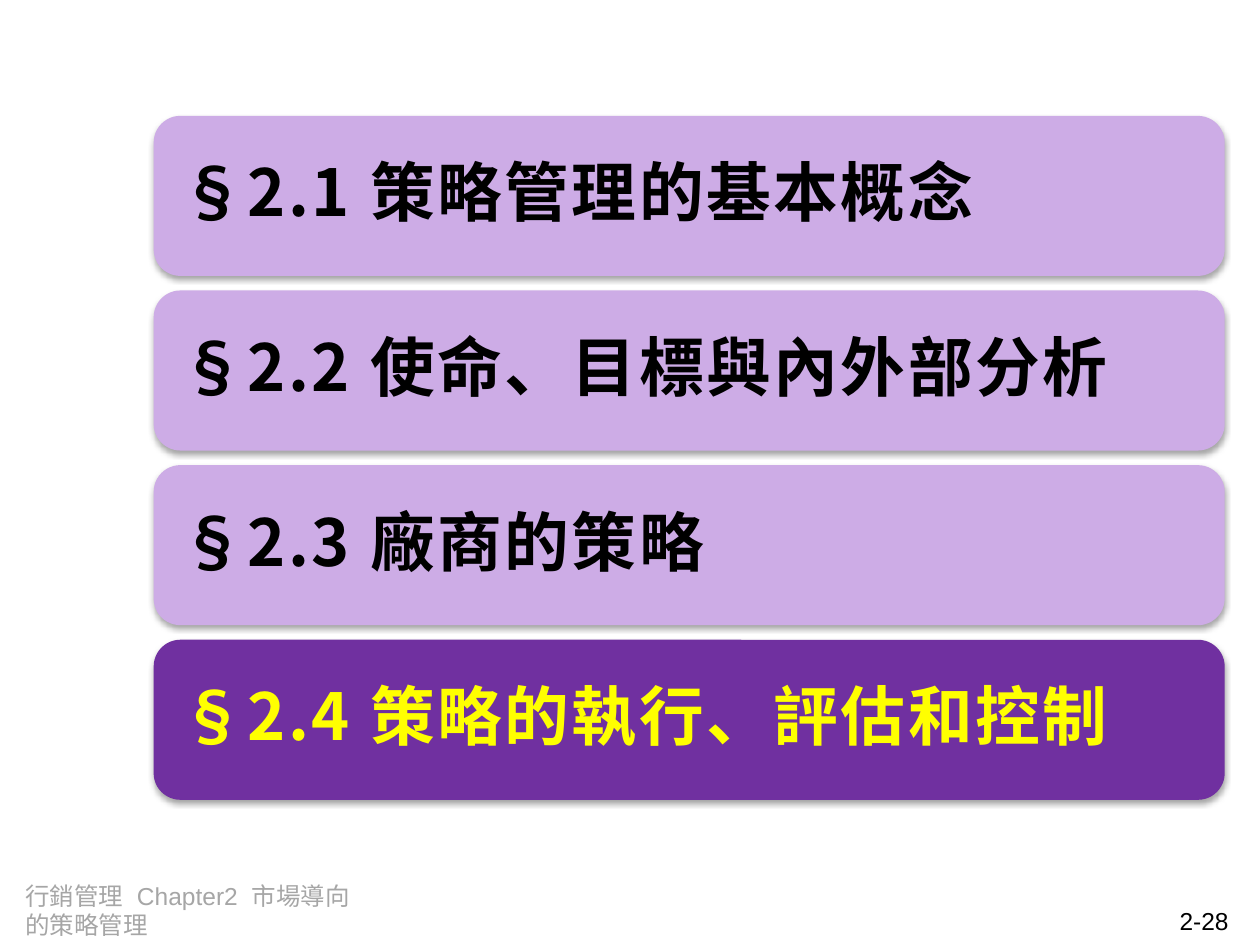
from dataclasses import dataclass

from lxml import etree
from pptx import Presentation
from pptx.dml.color import RGBColor
from pptx.enum.shapes import MSO_SHAPE
from pptx.enum.text import MSO_ANCHOR, PP_ALIGN
from pptx.oxml.ns import qn
from pptx.util import Inches, Pt

ROUNDED = MSO_SHAPE.ROUNDED_RECTANGLE
MIDDLE = MSO_ANCHOR.MIDDLE
LEFT, RIGHT = PP_ALIGN.LEFT, PP_ALIGN.RIGHT
COLUMNS, ROWS = 100, 75

SECTIONS = [
    "§2.1 策略管理的基本概念",
    "§2.2 使命、目標與內外部分析",
    "§2.3 廠商的策略",
    "§2.4 策略的執行、評估和控制",
]
CURRENT_SECTION = 3


@dataclass(frozen=True)
class Theme:
    bar: str = "CDACE6"
    bar_current: str = "7030A0"
    text: str = "000000"
    text_current: str = "FFFF00"
    footer: str = "A6A6A6"
    heading_font: str = "Noto Sans CJK SC"
    footer_font: str = "Arial"
    heading_size: float = 37
    footer_size: float = 14


def write_text(frame, text, *, font, size, color, bold=False, align=LEFT,
               spacing=0, line_spacing=None, space_after=None):
    frame.word_wrap = True
    paragraph = frame.paragraphs[0]
    paragraph.alignment = align
    paragraph.line_spacing = line_spacing
    paragraph.space_after = space_after
    run = paragraph.add_run()
    run.text = text
    run.font.name = font
    run.font.size = Pt(size)
    run.font.bold = bold
    run.font.color.rgb = RGBColor.from_string(color)
    properties = run.font._element
    if spacing:
        properties.set("spc", str(int(spacing * 100)))
    etree.SubElement(properties, qn("a:ea"), typeface=font)


def add_soft_shadow(shape):
    """Replace the inherited shadow by a faint one straight below."""
    shape.shadow.inherit = False
    effects = shape._element.spPr.find(qn("a:effectLst"))
    shadow = etree.SubElement(
        effects, qn("a:outerShdw"), blurRad=str(Pt(3.1)), dist=str(Pt(1.8)),
        dir="5400000", rotWithShape="0")
    color = etree.SubElement(shadow, qn("a:srgbClr"), val="000000")
    etree.SubElement(color, qn("a:alpha"), val="35000")


class SlideBuilder:
    def __init__(self, presentation, theme):
        self.theme = theme
        self.column = presentation.slide_width / COLUMNS
        self.row = presentation.slide_height / ROWS
        self.slide = presentation.slides.add_slide(presentation.slide_layouts[6])

    def place(self, left, top, width, height):
        """Turn grid columns and rows into slide lengths."""
        return (int(left * self.column), int(top * self.row),
                int(width * self.column), int(height * self.row))

    def section_bar(self, text, top, current):
        theme = self.theme
        shape = self.slide.shapes.add_shape(
            ROUNDED, *self.place(12.2, top, 85, 12.7))
        shape.fill.solid()
        shape.fill.fore_color.rgb = RGBColor.from_string(
            theme.bar_current if current else theme.bar)
        shape.line.fill.background()
        add_soft_shadow(shape)
        frame = shape.text_frame
        frame.vertical_anchor = MIDDLE
        frame.margin_left = frame.margin_right = Inches(0.15)
        frame.margin_top = frame.margin_bottom = Inches(0.15)
        write_text(frame, text, font=theme.heading_font, size=theme.heading_size,
                   color=theme.text_current if current else theme.text,
                   bold=True, spacing=1.5, line_spacing=0.9, space_after=Pt(13))

    def footer(self, text, left, top, width, color, align=LEFT):
        box = self.slide.shapes.add_textbox(*self.place(left, top, width, 2.9))
        write_text(box.text_frame, text, font=self.theme.footer_font,
                   size=self.theme.footer_size, color=color, align=align)


def main():
    presentation = Presentation()
    presentation.slide_width = Inches(10)
    presentation.slide_height = Inches(7.5)
    theme = Theme()
    builder = SlideBuilder(presentation, theme)
    builder.footer("行銷管理  Chapter2  市場導向的策略管理", 1, 69.4, 28.5, theme.footer)
    builder.footer("2-28", 75.2, 71.4, 23.3, theme.text, RIGHT)
    first_top, pitch = 9.2, 13.86
    for index, section in enumerate(SECTIONS):
        builder.section_bar(section, first_top + index * pitch,
                            current=index == CURRENT_SECTION)
    presentation.save("out.pptx")


if __name__ == "__main__":
    main()
